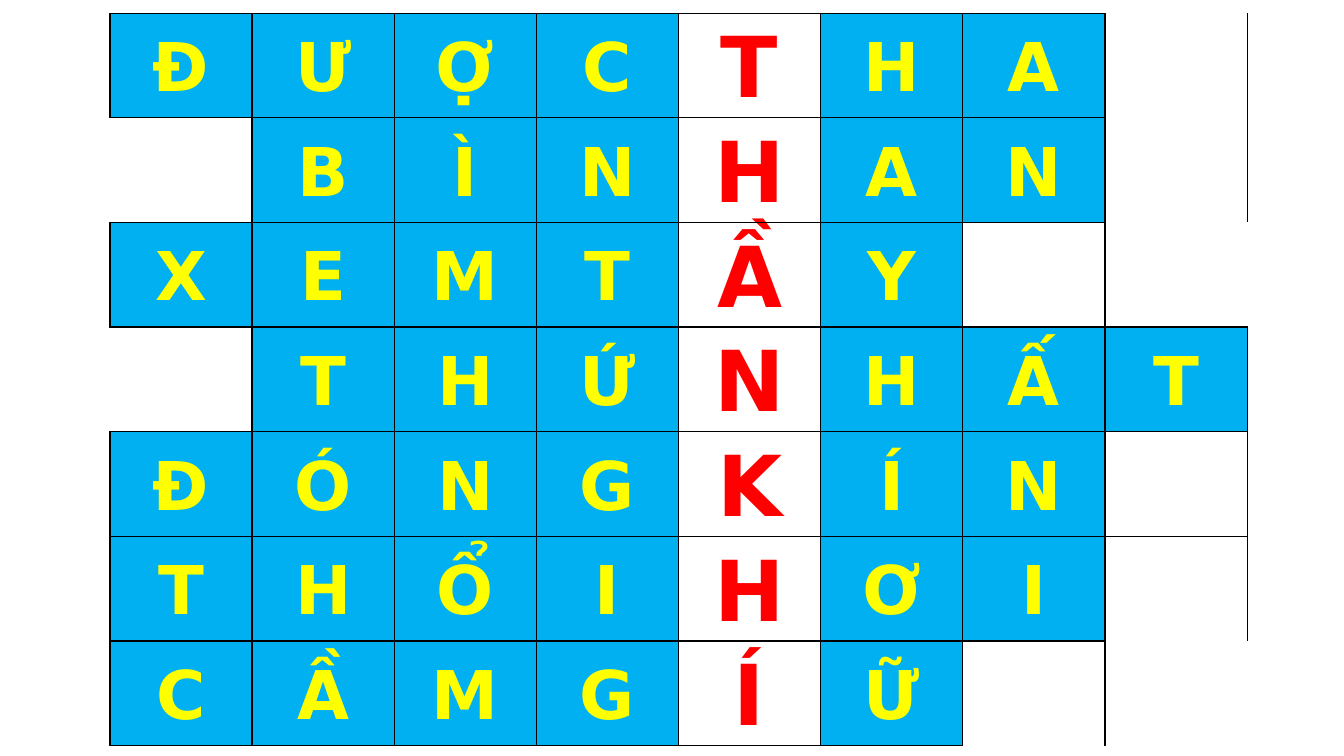
"""Build a crossword slide whose highlighted column spells the key phrase."""
from dataclasses import dataclass

from lxml.etree import SubElement
from pptx import Presentation
from pptx.dml.color import RGBColor
from pptx.enum.text import MSO_VERTICAL_ANCHOR as Anchor, PP_PARAGRAPH_ALIGNMENT as Align
from pptx.oxml.ns import qn
from pptx.table import _Cell as Cell
from pptx.util import Inches, Pt


@dataclass(frozen=True)
class Answer:
    start: int
    letters: str

    def letter_at(self, column: int) -> str:
        offset = column - self.start
        return self.letters[offset] if 0 <= offset < len(self.letters) else ""


@dataclass(frozen=True)
class LetterStyle:
    fill: str
    color: str
    size: int


ANSWERS = [
    Answer(0, "ĐƯỢCTHA"),
    Answer(1, "BÌNHAN"),
    Answer(0, "XEMTẦY"),
    Answer(1, "THỨNHẤT"),
    Answer(0, "ĐÓNGKÍN"),
    Answer(0, "THỔIHƠI"),
    Answer(0, "CẦMGÍỮ"),
]
COLUMN_COUNT = 10
KEY_COLUMN = 4
COLUMN_WIDTH = Inches(1.41)
ROW_HEIGHT = Inches(7.26 / len(ANSWERS))
PLAIN_STYLE = LetterStyle("00B0F0", "FFFF00", 48)
KEY_STYLE = LetterStyle("FFFFFF", "FF0000", 60)
NO_TABLE_STYLE = "{2D5ABB26-0587-4C30-8999-92F81FD0307C}"
EDGES = {"a:lnL": (0, -1), "a:lnR": (0, 1), "a:lnT": (-1, 0), "a:lnB": (1, 0)}
CELL_FORMAT = {
    "margin_left": Inches(0.07),
    "margin_right": Inches(0.07),
    "margin_top": 0,
    "margin_bottom": 0,
    "vertical_anchor": Anchor.MIDDLE,
}
PARAGRAPH_FORMAT = {"alignment": Align.CENTER, "line_spacing": 1.07}


def apply_format(target: object, values: dict) -> None:
    for name, value in values.items():
        setattr(target, name, value)


def rgb(value: str) -> RGBColor:
    return RGBColor.from_string(value)


def letter_in(row: int, column: int) -> str:
    return ANSWERS[row].letter_at(column) if 0 <= row < len(ANSWERS) else ""


def draw_borders(cell: Cell, row: int, column: int) -> None:
    properties = cell._tc.get_or_add_tcPr()
    for tag, (row_step, column_step) in EDGES.items():
        if letter_in(row, column) or letter_in(row + row_step, column + column_step):
            border = SubElement(properties, qn(tag), w=str(Pt(1)))
            solid = SubElement(border, qn("a:solidFill"))
            SubElement(solid, qn("a:srgbClr"), val="000000")


def write_letter(cell: Cell, letter: str, style: LetterStyle) -> None:
    cell.fill.solid()
    cell.fill.fore_color.rgb = rgb(style.fill)
    paragraph = cell.text_frame.paragraphs[0]
    apply_format(paragraph, PARAGRAPH_FORMAT)
    run = paragraph.add_run()
    run.text = letter
    apply_format(run.font, {"name": "DejaVu Sans", "size": Pt(style.size), "bold": True})
    run.font.color.rgb = rgb(style.color)


def main() -> None:
    deck = Presentation()
    apply_format(deck, {"slide_width": Inches(13.33), "slide_height": Inches(7.5)})
    slide = deck.slides.add_slide(deck.slide_layouts[6])
    crossword = slide.shapes.add_table(
        len(ANSWERS), COLUMN_COUNT, Inches(1.09), Inches(0.13),
        COLUMN_WIDTH * COLUMN_COUNT, ROW_HEIGHT * len(ANSWERS),
    ).table
    apply_format(crossword, {"first_row": False, "horz_banding": False})
    crossword._tbl.tblPr.find(qn("a:tableStyleId")).text = NO_TABLE_STYLE

    for row in range(len(ANSWERS)):
        for column in range(COLUMN_COUNT):
            cell = crossword.cell(row, column)
            apply_format(cell, CELL_FORMAT)
            draw_borders(cell, row, column)
            letter = letter_in(row, column)
            if letter:
                write_letter(cell, letter, KEY_STYLE if column == KEY_COLUMN else PLAIN_STYLE)
            else:
                cell.fill.background()

    deck.save("out.pptx")


if __name__ == "__main__":
    main()
